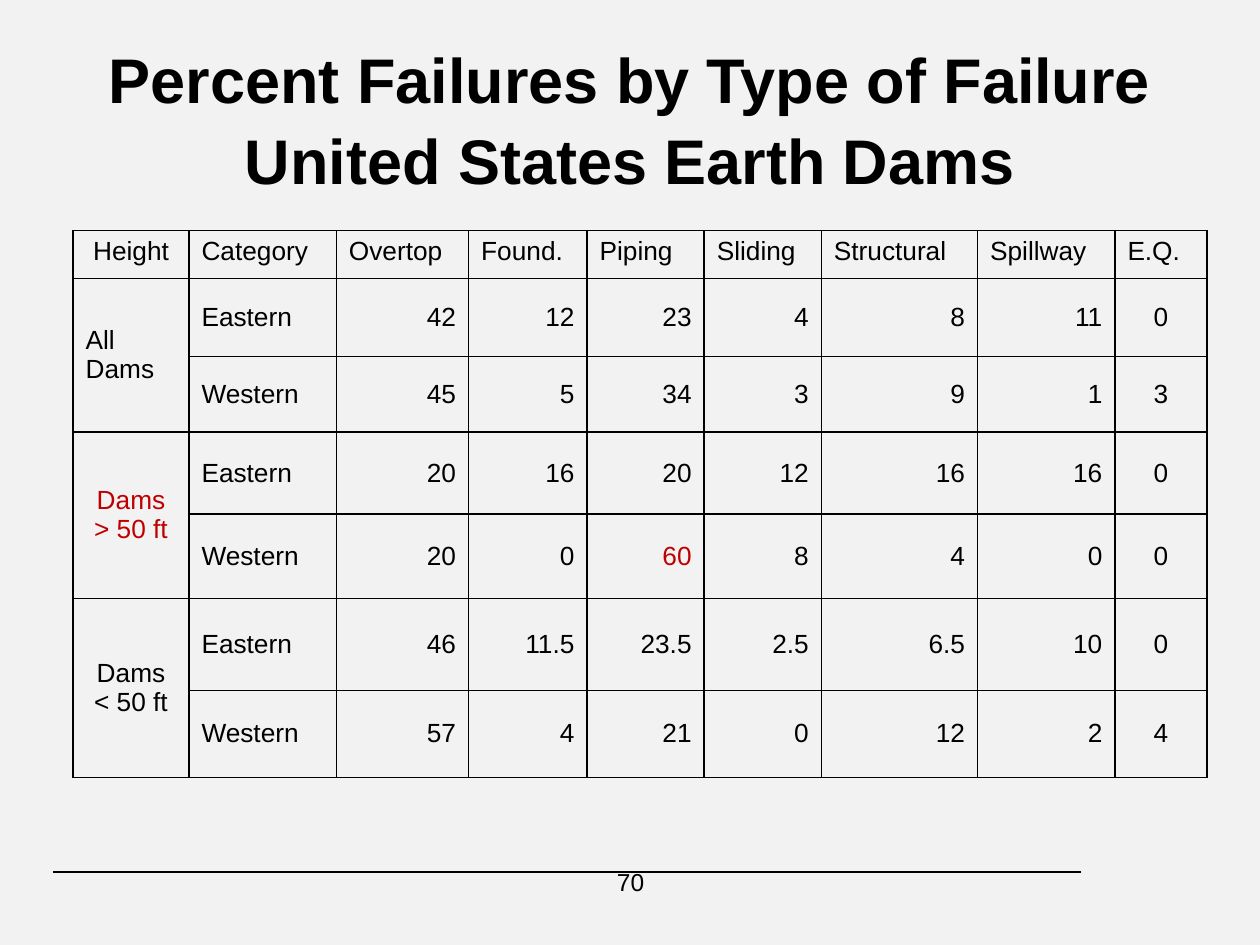
from lxml import etree
from pptx import Presentation
from pptx.dml.color import RGBColor
from pptx.enum.shapes import MSO_CONNECTOR as Connector
from pptx.enum.text import MSO_ANCHOR as Anchor, PP_ALIGN as Align
from pptx.oxml import parse_xml
from pptx.oxml.ns import nsdecls, qn
from pptx.util import Inches, Pt

BLACK = RGBColor(0x00, 0x00, 0x00)
RED = RGBColor(0xC0, 0x00, 0x00)
BACKGROUND = RGBColor(0xF2, 0xF2, 0xF2)
FONT = "Arial"

COLUMN_WIDTHS = [0.92, 1.17, 1.05, 0.94, 0.93, 0.93, 1.24, 1.09, 0.73]
ROW_HEIGHTS = [0.38, 0.62, 0.6, 0.65, 0.67, 0.73, 0.69]
HEADERS = ["Height", "Category", "Overtop", "Found.", "Piping",
           "Sliding", "Structural", "Spillway", "E.Q."]
# Height label, its alignment and colour, then the Eastern and Western rows
GROUPS = [
    ("All Dams", Align.LEFT, BLACK,
     [[42, 12, 23, 4, 8, 11, 0], [45, 5, 34, 3, 9, 1, 3]]),
    ("Dams\n> 50 ft", Align.CENTER, RED,
     [[20, 16, 20, 12, 16, 16, 0], [20, 0, 60, 8, 4, 0, 0]]),
    ("Dams\n< 50 ft", Align.CENTER, BLACK,
     [[46, 11.5, 23.5, 2.5, 6.5, 10, 0], [57, 4, 21, 0, 12, 2, 4]]),
]
HIGHLIGHT = 60


def write_text(frame, text, size, align, color=BLACK, bold=False):
    frame.text = text
    for paragraph in frame.paragraphs:
        paragraph.alignment = align
        font = paragraph.font
        font.name, font.size, font.bold = FONT, Pt(size), bold
        font.color.rgb = color


def add_title(slide, text):
    title = slide.shapes.title
    title.left, title.top = Inches(0.5), Inches(0.3)
    title.width, title.height = Inches(9), Inches(1.25)
    frame = title.text_frame
    frame.word_wrap = True
    frame.vertical_anchor = Anchor.MIDDLE
    write_text(frame, text, 36, Align.CENTER, bold=True)
    frame.paragraphs[0].line_spacing = 1.06


def format_cell(cell):
    """Outline a cell in black and leave it unfilled."""
    cell.fill.background()
    properties = cell._tc.get_or_add_tcPr()
    for index, side in enumerate(("lnL", "lnR", "lnT", "lnB")):
        properties.insert(index, parse_xml(
            f'<a:{side} {nsdecls("a")} w="{Pt(1)}"><a:solidFill>'
            f'<a:srgbClr val="{BLACK}"/></a:solidFill></a:{side}>'))


def fill_cell(cell, text, align, color=BLACK, anchor=Anchor.MIDDLE):
    write_text(cell.text_frame, text, 15, align, color)
    cell.vertical_anchor = anchor


def add_failure_table(slide):
    table = slide.shapes.add_table(
        len(ROW_HEIGHTS), len(COLUMN_WIDTHS), Inches(0.58), Inches(1.83),
        Inches(sum(COLUMN_WIDTHS)), Inches(sum(ROW_HEIGHTS))).table
    table.first_row = table.horz_banding = False
    for column, width in zip(table.columns, COLUMN_WIDTHS):
        column.width = Inches(width)
    for row, height in zip(table.rows, ROW_HEIGHTS):
        row.height = Inches(height)
    for cell in table.iter_cells():
        format_cell(cell)

    # Header row
    for column, header in enumerate(HEADERS):
        align = Align.LEFT if column else Align.CENTER
        fill_cell(table.cell(0, column), header, align, anchor=Anchor.TOP)

    # Two rows for each height group
    last = len(HEADERS) - 1
    for group, (label, align, color, records) in enumerate(GROUPS):
        top = 1 + 2 * group
        table.cell(top, 0).merge(table.cell(top + 1, 0))
        fill_cell(table.cell(top, 0), label, align, color)
        for row, (region, values) in enumerate(
                zip(("Eastern", "Western"), records), top):
            fill_cell(table.cell(row, 1), region, Align.LEFT)
            for column, value in enumerate(values, 2):
                fill_cell(table.cell(row, column), str(value),
                          Align.CENTER if column == last else Align.RIGHT,
                          RED if value == HIGHLIGHT else BLACK)


def add_footer(slide, number):
    rule = slide.shapes.add_connector(
        Connector.STRAIGHT, Inches(8.58), Inches(6.92), Inches(0.42), Inches(6.92))
    rule.line.color.rgb = BLACK
    rule.line.width = Pt(0.75)
    etree.SubElement(rule._element.spPr, qn("a:effectLst"))
    box = slide.shapes.add_textbox(
        Inches(3.42), Inches(6.83), Inches(3.17), Inches(0.52))
    box.text_frame.word_wrap = True
    write_text(box.text_frame, number, 14, Align.CENTER)


def main():
    presentation = Presentation()
    presentation.slide_width, presentation.slide_height = Inches(10), Inches(7.5)
    slide = presentation.slides.add_slide(presentation.slide_layouts[5])
    slide.background.fill.solid()
    slide.background.fill.fore_color.rgb = BACKGROUND
    add_footer(slide, "70")
    add_failure_table(slide)
    add_title(slide, "Percent Failures by Type of Failure\vUnited States Earth Dams")
    presentation.save("out.pptx")


if __name__ == "__main__":
    main()
